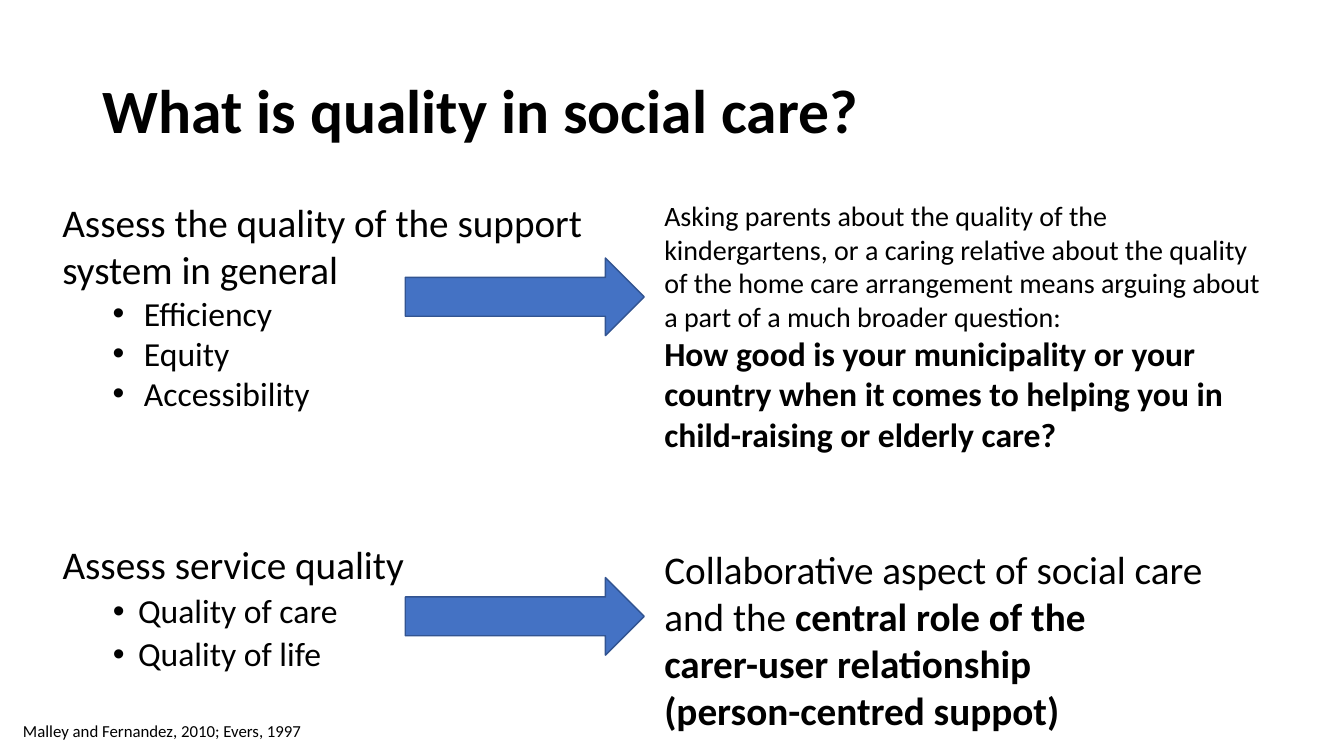
from lxml import etree
from pptx import Presentation
from pptx.dml.color import RGBColor
from pptx.enum.shapes import MSO_SHAPE
from pptx.enum.text import MSO_ANCHOR, MSO_AUTO_SIZE, PP_ALIGN
from pptx.oxml.ns import qn
from pptx.util import Emu, Pt

EMU_PER_PX = 9144  # 100 px to the inch
FONT = "Calibri"
COLORS = {"text": "000000", "arrow": "4472C4", "arrow_edge": "325491"}
RIGHT_ARROW = MSO_SHAPE.RIGHT_ARROW
MIDDLE, TOP = MSO_ANCHOR.MIDDLE, MSO_ANCHOR.TOP
LEFT = PP_ALIGN.LEFT
NO_FIT, GROW = MSO_AUTO_SIZE.NONE, MSO_AUTO_SIZE.SHAPE_TO_FIT_TEXT

LEFT_X, ARROW_X, RIGHT_X = 52, 402, 649
TOP_ROW_Y, BOTTOM_ROW_Y = 192, 536
ARROW_W, ARROW_H = 237, 77


def px(length):
    return Emu(length * EMU_PER_PX)


def color(name):
    return RGBColor.from_string(COLORS[name])


def place(placeholder, box):
    placeholder.left, placeholder.top, placeholder.width, placeholder.height = map(px, box)


def set_bullet(paragraph, margin, hang):
    """Hang a round bullet in front of the paragraph, or none when hang is 0."""
    properties = paragraph._p.get_or_add_pPr()
    properties.set("marL", str(px(margin)))
    properties.set("indent", str(px(-hang)))
    if hang:
        etree.SubElement(properties, qn("a:buFont")).set("typeface", "Arial")
        etree.SubElement(properties, qn("a:buChar")).set("char", "•")
    else:
        etree.SubElement(properties, qn("a:buNone"))


def write(frame, paragraphs, line_spacing=1.0, before=(0, 0), bullet=(0, 0)):
    """Fill a frame from (level, size, [(text, bold), ...]) paragraphs.

    before holds the space above each level; bullet is (margin, hang) for level 1.
    """
    for index, (level, size, runs) in enumerate(paragraphs):
        paragraph = frame.paragraphs[0] if index == 0 else frame.add_paragraph()
        paragraph.level = level
        paragraph.alignment = LEFT
        paragraph.line_spacing = line_spacing
        paragraph.space_before = Pt(before[level])
        set_bullet(paragraph, *(bullet if level else (0, 0)))
        for text, bold in runs:
            run = paragraph.add_run()
            run.text = text
            run.font.name = FONT
            run.font.size = Pt(size)
            run.font.bold = bold
            run.font.color.rgb = color("text")


def heading_with_points(heading, points):
    return [(0, 28, [(heading, False)])] + [(1, 24, [(point, False)]) for point in points]


def add_text(shapes, box, paragraphs, wrap=True, **layout):
    frame = shapes.add_textbox(*map(px, box)).text_frame
    frame.word_wrap = wrap
    frame.auto_size = GROW
    write(frame, paragraphs, **layout)


def add_arrow(shapes, y):
    arrow = shapes.add_shape(RIGHT_ARROW, *map(px, (ARROW_X, y, ARROW_W, ARROW_H)))
    arrow.shadow.inherit = False
    arrow.fill.solid()
    arrow.fill.fore_color.rgb = color("arrow")
    arrow.line.color.rgb = color("arrow_edge")
    arrow.line.width = Pt(1)


def fill_title(title, box):
    place(title, box)
    frame = title.text_frame
    frame.auto_size = NO_FIT
    frame.vertical_anchor = MIDDLE
    write(frame, [(0, 44, [("What is quality in social care?", True)])], line_spacing=0.9)


def fill_service_quality(body, box):
    place(body, box)
    frame = body.text_frame
    frame.auto_size = NO_FIT
    frame.vertical_anchor = TOP
    write(
        frame,
        heading_with_points("Assess service quality", ["Quality of care", "Quality of life"]),
        line_spacing=0.9, before=(10, 5), bullet=(75, 25),
    )


def add_support_system(shapes, y):
    row = shapes.add_group_shape().shapes
    add_arrow(row, y + 64)
    add_text(
        row, (LEFT_X, y, 567, 226),
        heading_with_points("Assess the quality of the support system in general",
                            ["Efficiency", "Equity", "Accessibility"]),
        bullet=(81, 31),
    )
    add_text(row, (RIGHT_X, y, 624, 266), [
        (0, 20, [("Asking parents about the quality of the kindergartens, or a caring "
                  "relative about the quality of the home care arrangement means arguing "
                  "about a part of a much broader question:", False)]),
        (0, 24, [("How good is your municipality or your country when it comes to "
                  "helping you in child-raising or elderly care?", True)]),
    ])


def add_collaboration(shapes, y):
    add_text(shapes, (RIGHT_X, y, 568, 199), [
        (0, 28, [("Collaborative aspect of social care", False)]),
        (0, 28, [("and the ", False), ("central role of the", True)]),
        (0, 28, [("carer-user relationship", True)]),
        (0, 28, [("(person-centred suppot)", True)]),
    ], wrap=False)


def add_sources(shapes, box):
    citation = "Malley and Fernandez, 2010; Evers, 1997"
    add_text(shapes, box, [(0, 12, [(citation, False)])], wrap=False)


def main():
    deck = Presentation()
    deck.slide_width, deck.slide_height = px(1333), px(750)
    slide = deck.slides.add_slide(deck.slide_layouts[1])
    shapes = slide.shapes
    fill_title(shapes.title, (92, 40, 1150, 145))
    fill_service_quality(slide.placeholders[1], (LEFT_X, BOTTOM_ROW_Y, 567, 141))
    add_sources(shapes, (13, 710, 300, 30))
    add_arrow(shapes, BOTTOM_ROW_Y + 37)
    add_support_system(shapes, TOP_ROW_Y)
    add_collaboration(shapes, BOTTOM_ROW_Y)
    deck.save("out.pptx")


if __name__ == "__main__":
    main()
